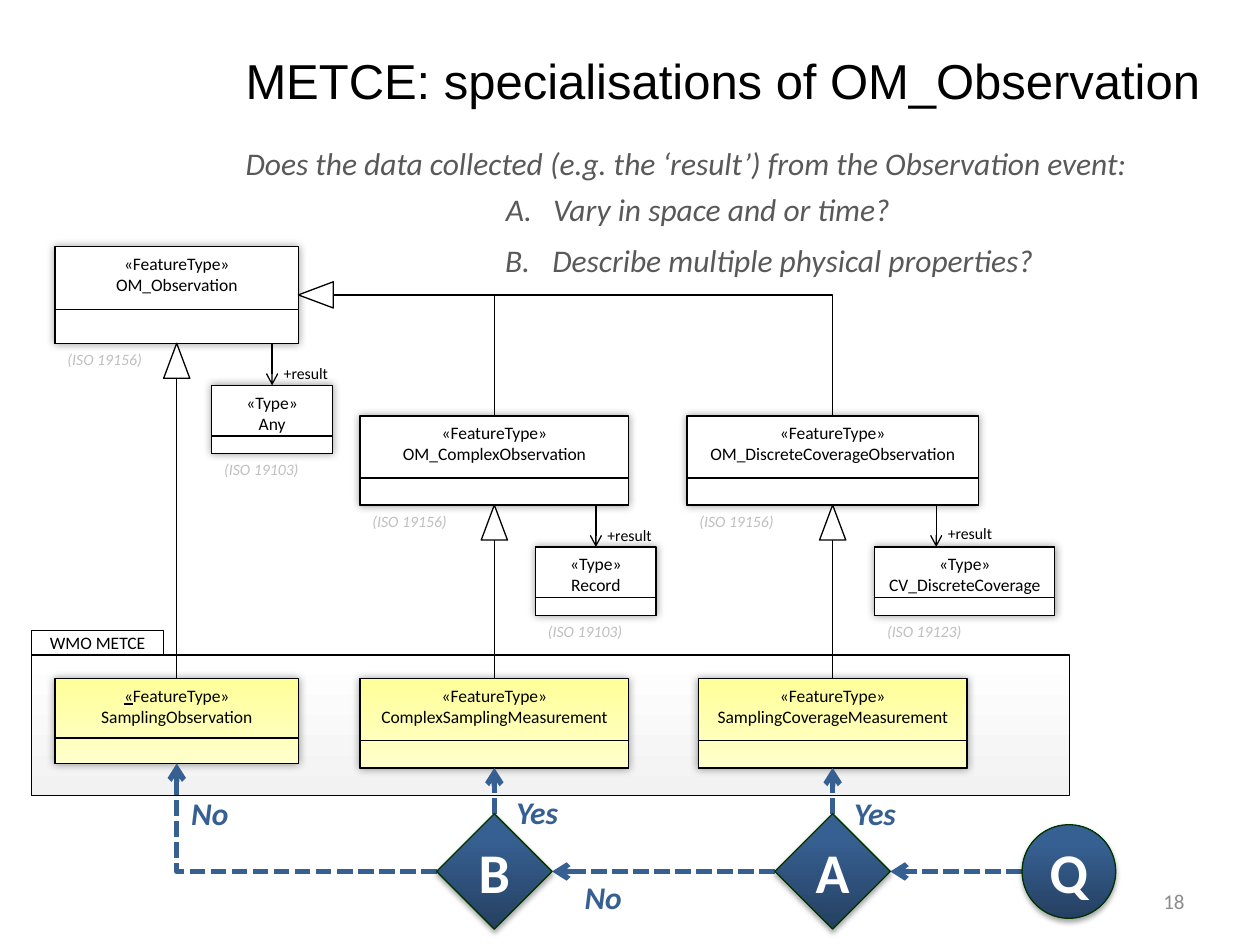
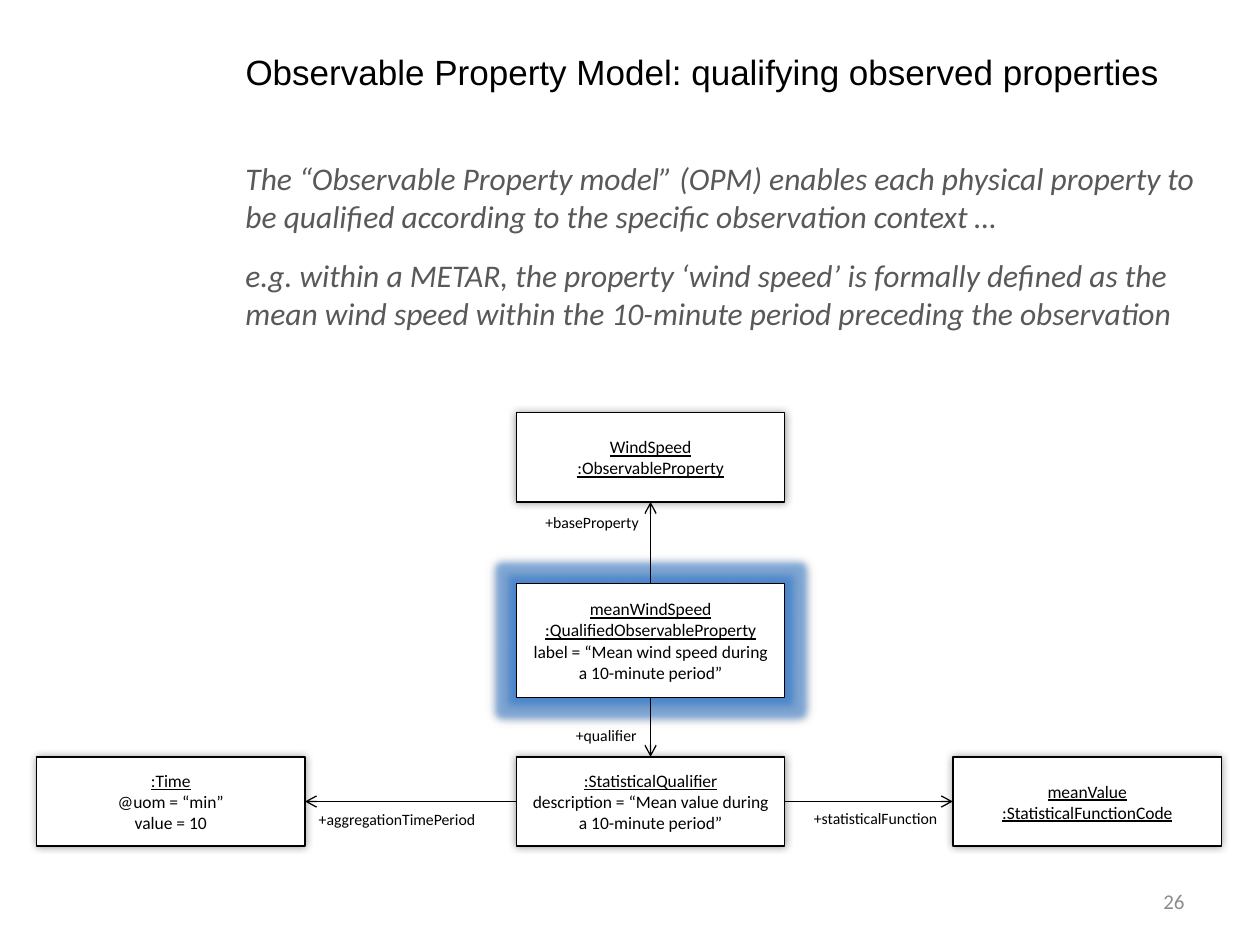
from dataclasses import dataclass

from lxml import etree
from pptx import Presentation
from pptx.dml.color import RGBColor
from pptx.enum.dml import MSO_LINE
from pptx.enum.shapes import MSO_CONNECTOR, MSO_SHAPE
from pptx.enum.text import MSO_ANCHOR, MSO_AUTO_SIZE, PP_ALIGN
from pptx.oxml.ns import qn
from pptx.util import Pt

RECTANGLE = MSO_SHAPE.RECTANGLE
DIAMOND = MSO_SHAPE.DIAMOND
OVAL = MSO_SHAPE.OVAL
TRIANGLE = MSO_SHAPE.ISOSCELES_TRIANGLE
STRAIGHT = MSO_CONNECTOR.STRAIGHT
DASHED = MSO_LINE.SQUARE_DOT
GROW = MSO_AUTO_SIZE.SHAPE_TO_FIT_TEXT
LEFT, CENTER, RIGHT = PP_ALIGN.LEFT, PP_ALIGN.CENTER, PP_ALIGN.RIGHT
TOP, MIDDLE = MSO_ANCHOR.TOP, MSO_ANCHOR.MIDDLE


@dataclass(frozen=True)
class Theme:
    heading_font: str = "Arial"
    body_font: str = "Calibri"
    black: str = "000000"
    white: str = "FFFFFF"
    body: str = "595959"
    page_number: str = "8C8C8C"
    source: str = "BFBFBF"
    decision: str = "376092"
    decision_border: str = "003300"
    glow: str = "2E7BD6"
    # Gradients run upwards: bottom colour, top colour, where the top is reached
    decision_fill: tuple = ("254061", "376092", 0.8)
    metce_fill: tuple = ("FFFFCC", "FFFF99", 1)
    panel_fill: tuple = ("F2F2F2", "FFFFFF", 1)
    body_size: float = 18
    letter_size: float = 32
    class_size: float = 10
    label_size: float = 9
    page_size: float = 12
    thin: float = 0.75
    thick: float = 3


THEME = Theme()


def rgb(color):
    return RGBColor.from_string(color)


def write_text(frame, text, size=THEME.class_size, color=THEME.black,
               font=THEME.body_font, bold=False, italic=False, align=LEFT,
               anchor=TOP, wrap=True, after=0, number=None):
    """One paragraph a line; what stands before a bar is underlined."""
    frame.word_wrap = wrap
    frame.vertical_anchor = anchor
    for index, line in enumerate(text.split("\n")):
        paragraph = frame.paragraphs[0] if index == 0 else frame.add_paragraph()
        paragraph.alignment = align
        paragraph.space_after = Pt(after)
        if number:
            number_paragraph(paragraph, number)
        underlined, _, plain = line.rpartition("|")
        for part, underline in ((underlined, True), (plain, False)):
            if part:
                run = paragraph.add_run()
                run.text = part
                run.font.name = font
                run.font.size = Pt(size)
                run.font.color.rgb = rgb(color)
                run.font.bold = bold
                run.font.italic = italic
                run.font.underline = underline


def number_paragraph(paragraph, number):
    properties = paragraph._p.get_or_add_pPr()
    properties.set("marL", str(Pt(27)))
    properties.set("indent", str(Pt(-27)))
    etree.SubElement(properties, qn("a:buAutoNum"),
                     type="alphaUcPeriod", startAt=str(number))


def add_text(slide, text, left, top, width, height, **text_format):
    shape = slide.shapes.add_textbox(Pt(left), Pt(top), Pt(width), Pt(height))
    write_text(shape.text_frame, text, **text_format)
    if not shape.text_frame.word_wrap:
        shape.text_frame.auto_size = GROW


def add_label(slide, text, left, top, width, **text_format):
    add_text(slide, text, left, top, width, 18,
             **{"size": THEME.label_size, "wrap": False, **text_format})


def add_answer(slide, text, left, top, width):
    add_text(slide, text, left, top, width, 29, size=THEME.body_size,
             color=THEME.decision, bold=True, italic=True, wrap=False)


def add_effect(shape, kind, color, alpha, **settings):
    effects = shape._element.spPr.find(qn("a:effectLst"))
    effect = etree.SubElement(effects, qn("a:" + kind),
                              {name: str(value) for name, value in settings.items()})
    color_element = etree.SubElement(effect, qn("a:srgbClr"), val=color)
    etree.SubElement(color_element, qn("a:alpha"), val=str(alpha * 1000))


def add_soft_shadow(shape):
    add_effect(shape, "outerShdw", THEME.black, 40, blurRad=Pt(5), dist=0,
               algn="ctr", rotWithShape=0)


def add_figure(slide, kind, left, top, width, height, fill=THEME.white,
               border=THEME.black):
    """Fill is a colour, a gradient tuple or None."""
    shape = slide.shapes.add_shape(kind, Pt(left), Pt(top), Pt(width), Pt(height))
    shape.shadow.inherit = False
    shape.line.color.rgb = rgb(border)
    shape.line.width = Pt(THEME.thin)
    if fill is None:
        shape.fill.background()
    elif isinstance(fill, tuple):
        bottom, top_color, reach = fill
        shape.fill.gradient()
        shape.fill.gradient_angle = 90
        first, last = shape.fill.gradient_stops
        first.color.rgb, first.position = rgb(bottom), 0
        last.color.rgb, last.position = rgb(top_color), reach
    else:
        shape.fill.solid()
        shape.fill.fore_color.rgb = rgb(fill)
    return shape


def add_line(slide, begin, end, color=THEME.black, width=THEME.thin,
             dash=None, arrow=True):
    connector = slide.shapes.add_connector(STRAIGHT, *map(Pt, begin + end))
    connector.line.color.rgb = rgb(color)
    connector.line.width = Pt(width)
    if dash:
        connector.line.dash_style = dash
    properties = connector._element.spPr
    if arrow:
        etree.SubElement(properties.find(qn("a:ln")), qn("a:tailEnd"), type="arrow")
    etree.SubElement(properties, qn("a:effectLst"))
    return connector


def bend(connector, reverse=False):
    """Go sideways, then down; reversed, from the lower right sideways, then up."""
    properties = connector._element.spPr
    properties.find(qn("a:prstGeom")).set("prst", "bentConnector2")
    if reverse:
        properties.find(qn("a:xfrm")).set("rot", "10800000")


def add_decision_arrow(slide, begin, end):
    return add_line(slide, begin, end, THEME.decision, THEME.thick, DASHED)


def add_class(slide, text, center, top, width, height, strip, source=None,
              fill=THEME.white):
    """A class box with an empty strip at its foot and its standard below."""
    left, bottom = center - width / 2, top + height
    box = add_figure(slide, RECTANGLE, left, top, width, height, fill)
    add_soft_shadow(box)
    write_text(box.text_frame, text, align=CENTER)
    add_figure(slide, RECTANGLE, left, bottom - strip, width, strip,
               fill if fill == THEME.white else None)
    if source:
        add_label(slide, f"({source})", left, bottom, 57.5,
                  color=THEME.source, italic=True)


def add_result(slide, name, center, owner_bottom, width, source, arrow_x, label_top):
    top = owner_bottom + 24
    add_class(slide, f"«Type»\n{name}", center, top, width, 39, 10, source)
    add_line(slide, (arrow_x, owner_bottom), (arrow_x, top))
    add_label(slide, "+result", arrow_x - 0.5, label_top, 40)


def add_generalisation(slide, center, begin_y, end_y):
    add_line(slide, (center, begin_y), (center, end_y), arrow=False)
    add_figure(slide, TRIANGLE, center - 7.5, end_y, 15, 20)


def add_decision(slide, kind, letter, center, middle, size):
    shape = add_figure(slide, kind, center - size / 2, middle - size / 2, size, size,
                       THEME.decision_fill, THEME.decision_border)
    add_effect(shape, "outerShdw", THEME.black, 35, blurRad=Pt(3.1), dist=Pt(1.8),
               dir=5400000, rotWithShape=0)
    frame = shape.text_frame
    frame.margin_left = frame.margin_right = frame.margin_top = frame.margin_bottom = 0
    write_text(frame, letter, size=THEME.letter_size, color=THEME.white, bold=True,
               align=CENTER, anchor=MIDDLE, wrap=False)


def add_object(slide, text, left, top, height=51):
    box = add_figure(slide, RECTANGLE, left, top, 153.5, height)
    write_text(box.text_frame, text, align=CENTER, anchor=MIDDLE)
    return box


def add_slide(presentation, title, title_size, page):
    slide = presentation.slides.add_slide(presentation.slide_layouts[6])
    add_text(slide, title, 133.2, 25.2, 586.8, 54, size=title_size,
             font=THEME.heading_font)
    add_text(slide, page, 516, 500.5, 168, 29, size=THEME.page_size,
             color=THEME.page_number, align=RIGHT, anchor=MIDDLE)
    return slide


def build_specialisations(presentation):
    slide = add_slide(presentation, "METCE: specialisations of OM_Observation", 28, "18")
    question = {"size": THEME.body_size, "color": THEME.body, "italic": True}
    add_text(slide, "Does the data collected (e.g. the ‘result’) from the "
             "Observation event:", 133.2, 78.5, 566, 29, **question)
    add_text(slide, "Vary in space and or time?", 282, 105, 243, 29,
             number=1, wrap=False, **question)
    add_text(slide, "Describe multiple physical properties?", 281.5, 134, 327.5, 29,
             number=2, wrap=False, **question)

    add_figure(slide, RECTANGLE, 18, 374.3, 593, 80.5, THEME.panel_fill)
    tab = add_figure(slide, RECTANGLE, 18, 360.3, 75.5, 14)
    write_text(tab.text_frame, "WMO METCE", align=CENTER, anchor=MIDDLE)

    sampling, complex_, coverage = 101, 282.5, 475.8
    base_bottom, child_top, child_bottom, metce_top = 196.2, 237.8, 288.6, 387.8
    base_right, base_middle = 170.5, 168.5
    feature = "«FeatureType»\n"
    add_class(slide, feature + "OM_Observation", sampling, 141, 139, 55.2, 19.5,
              "ISO 19156")
    for center, name, width in ((complex_, "OM_ComplexObservation", 153.5),
                                (coverage, "OM_DiscreteCoverageObservation", 166.5)):
        bend(add_line(slide, (base_right, base_middle), (center, child_top),
                      arrow=False))
        add_class(slide, feature + name, center, child_top, width, 50.8, 15.5,
                  "ISO 19156")
    pointer = add_figure(slide, TRIANGLE, base_right + 2.5, base_middle - 10, 15, 20)
    pointer.rotation = 270

    add_result(slide, "Any", 155.5, base_bottom, 69, "ISO 19103", 155.5, 204.5)
    add_result(slide, "Record", 340.5, child_bottom, 69, "ISO 19103", 340.5, 297)
    add_result(slide, "CV_DiscreteCoverage", 551.3, child_bottom, 103, "ISO 19123",
               535, 295.5)

    for center, name, width, height, strip, parent_bottom in (
            (sampling, "«|FeatureType»\nSamplingObservation", 139, 48.5, 14.5,
             base_bottom),
            (complex_, feature + "ComplexSamplingMeasurement", 153.5, 51, 15.5,
             child_bottom),
            (coverage, feature + "SamplingCoverageMeasurement", 153.5, 51, 15.5,
             child_bottom)):
        add_class(slide, name, center, metce_top, width, height, strip,
                  fill=THEME.metce_fill)
        add_generalisation(slide, center, metce_top, parent_bottom)

    middle, diamond, circle, start = 498, 66, 53.5, 610.8
    half = diamond / 2
    for center in (complex_, coverage):
        add_decision_arrow(slide, (center, middle - half), (center, metce_top + 51))
    add_decision_arrow(slide, (start - circle / 2, middle), (coverage + half, middle))
    add_decision_arrow(slide, (coverage - half, middle), (complex_ + half, middle))
    bend(add_decision_arrow(slide, (sampling, 436.3), (complex_ - half, middle)),
         reverse=True)
    add_decision(slide, DIAMOND, "B", complex_, middle, diamond)
    add_decision(slide, DIAMOND, "A", coverage, middle, diamond)
    add_decision(slide, OVAL, "Q", start, middle, circle)
    for text, left, top, width in (("No", 102.2, 450, 36), ("Yes", 288, 449.5, 40.3),
                                   ("Yes", 481, 450, 40.3), ("No", 327, 498, 36)):
        add_answer(slide, text, left, top, width)


def build_property_model(presentation):
    slide = add_slide(presentation, "Observable Property Model: qualifying observed "
                      "properties", 20, "26")
    add_text(slide, "The “Observable Property model” (OPM) enables each physical "
             "property to be qualified according to the specific observation context …\n"
             "e.g. within a METAR, the property ‘wind speed’ is formally defined as "
             "the mean wind speed within the 10-minute period preceding the "
             "observation", 133.2, 87.4, 567.5, 106.5, size=THEME.body_size,
             color=THEME.body, italic=True, after=12)

    column, center, row, middle = 295, 371.75, 432.5, 458
    mean = add_object(slide, "meanWindSpeed|\n:QualifiedObservableProperty|\n"
                      "label = “Mean wind speed during a 10-minute period”",
                      column, 333.5, 65)
    add_effect(mean, "glow", THEME.glow, 50, rad=Pt(8))
    add_soft_shadow(mean)
    for text, left, top in (
            ("WindSpeed|\n:ObservableProperty|", column, 235.8),
            (":StatisticalQualifier|\ndescription = “Mean value during "
             "a 10-minute period”", column, row),
            ("meanValue|\n:StatisticalFunctionCode|", 544.5, row),
            (":Time|\n@uom = “min”\nvalue = 10", 20.8, row)):
        add_soft_shadow(add_object(slide, text, left, top))

    for text, left, top, width, begin, end in (
            ("+baseProperty", 304.5, 289.5, 68.5, (center, 333.5), (center, 286.8)),
            ("+qualifier", 322, 411, 49.5, (center, 398.5), (center, row)),
            ("+statisticalFunction", 458, 458.5, 86.5, (448.5, middle), (544.5, middle)),
            ("+aggregationTimePeriod", 175, 459, 106, (column, middle), (174.3, middle))):
        add_line(slide, begin, end)
        add_label(slide, text, left, top, width)


def main():
    presentation = Presentation()
    presentation.slide_width, presentation.slide_height = Pt(720), Pt(540)
    build_specialisations(presentation)
    build_property_model(presentation)
    presentation.save("out.pptx")


if __name__ == "__main__":
    main()
